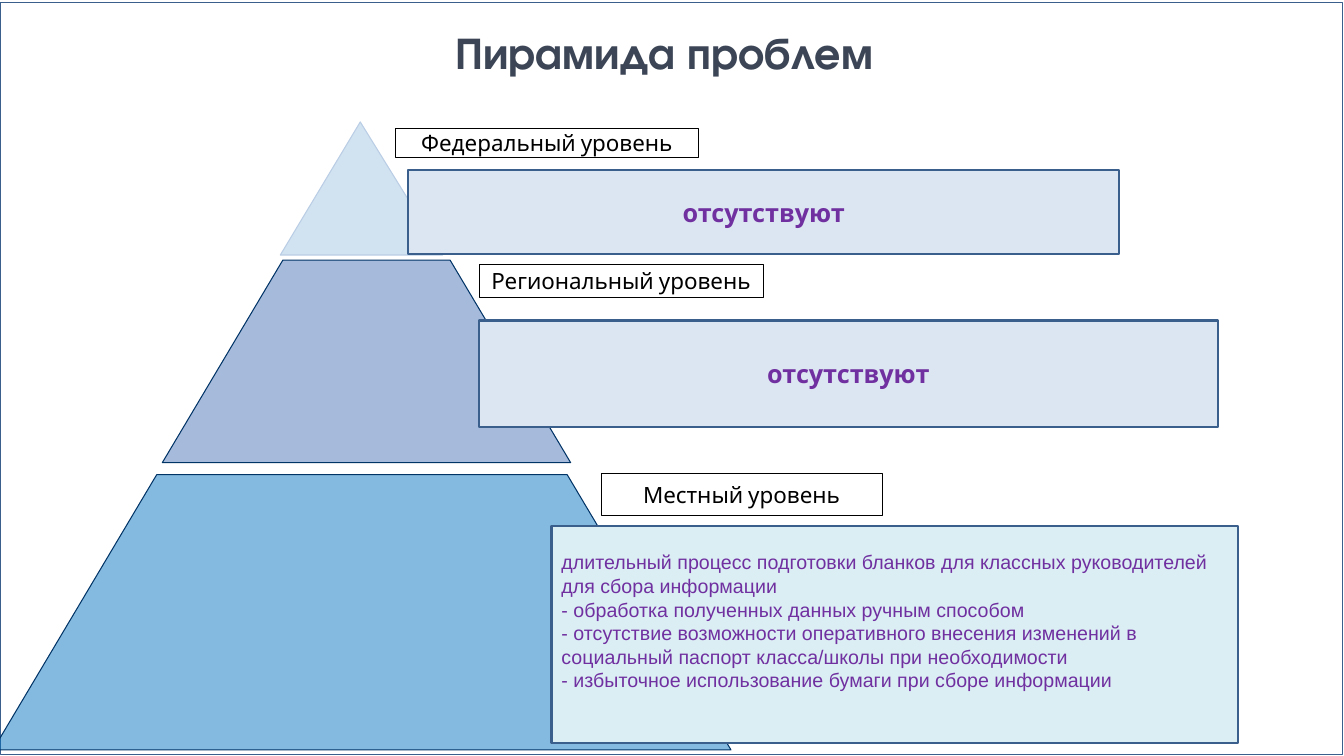
from pptx import Presentation
from pptx.dml.color import RGBColor
from pptx.enum.shapes import MSO_SHAPE
from pptx.enum.text import MSO_ANCHOR, PP_ALIGN
from pptx.oxml.ns import qn
from pptx.util import Inches, Pt
from lxml import etree

RECTANGLE = MSO_SHAPE.RECTANGLE
TRIANGLE = MSO_SHAPE.ISOSCELES_TRIANGLE
TRAPEZOID = MSO_SHAPE.TRAPEZOID
LEFT, CENTER = PP_ALIGN.LEFT, PP_ALIGN.CENTER
TOP, MIDDLE = MSO_ANCHOR.TOP, MSO_ANCHOR.MIDDLE

TITLE_FORMAT = {"name": "TeX Gyre Adventor", "size": Pt(32), "bold": True}
LABEL_FORMAT = {"name": "Cabin", "size": Pt(16), "bold": False}
ANSWER_FORMAT = {"name": "Cabin", "size": Pt(18), "bold": True}
PROBLEM_FORMAT = {"name": "Arial", "size": Pt(14), "bold": False}

FRAME_BLUE = "3A5F8C"
PURPLE = "7030A0"
MISSING = ["отсутствуют"]
LOCAL_PROBLEMS = [
    "длительный процесс подготовки бланков для классных руководителей для сбора информации",
    "- обработка полученных данных ручным способом",
    "- отсутствие возможности оперативного внесения изменений в социальный паспорт "
    "класса/школы при необходимости",
    "- избыточное использование бумаги при сборе информации",
]

# shape, box, adjustment, fill, opacity in percent, line
PYRAMID_TIERS = [
    (TRIANGLE, (2.78, 1.21, 1.61, 1.32), 0.493, "327FBE", 22, "B9CDE5"),
    (TRAPEZOID, (1.61, 2.58, 4.05, 2.01), 0.595, "4770B5", 48, "003366"),
    (TRAPEZOID, (-0.07, 4.71, 7.32, 2.73), 0.595, "0070C0", 48, "003366"),
]
# label, label box, answer box
MISSING_LEVELS = [
    ("Федеральный уровень", (3.92, 1.27, 3.01, 0.29), (4.05, 1.69, 7.05, 0.83)),
    ("Региональный уровень", (4.75, 2.62, 2.82, 0.33), (4.75, 3.18, 7.33, 1.06)),
]


def color(hex_string):
    return RGBColor.from_string(hex_string)


def add_outlined_shape(slide, kind, box, fill, line, line_width):
    shape = slide.shapes.add_shape(kind, *(Inches(length) for length in box))
    shape.shadow.inherit = False
    if fill is None:
        shape.fill.background()
    else:
        shape.fill.solid()
        shape.fill.fore_color.rgb = color(fill)
    shape.line.color.rgb = color(line)
    shape.line.width = Pt(line_width)
    return shape


def write_text(shape, lines, font_format, font_color, alignment=CENTER,
               anchor=MIDDLE, side_margin=0.1, top_margin=0.05):
    frame = shape.text_frame
    frame.word_wrap = True
    frame.vertical_anchor = anchor
    frame.margin_left = frame.margin_right = Inches(side_margin)
    frame.margin_top = Inches(top_margin)
    frame.text = "\n".join(lines)
    for paragraph in frame.paragraphs:
        paragraph.alignment = alignment
        for run in paragraph.runs:
            for attribute, value in font_format.items():
                setattr(run.font, attribute, value)
            run.font.color.rgb = color(font_color)


def add_title(slide, box):
    title = slide.shapes.add_textbox(*(Inches(length) for length in box))
    write_text(title, ["Пирамида проблем"], TITLE_FORMAT, "3B4555")


def add_pyramid(slide):
    for kind, box, adjustment, fill, opacity, line in PYRAMID_TIERS:
        tier = add_outlined_shape(slide, kind, box, fill, line, 0.75)
        tier.adjustments[0] = adjustment
        fill_color = tier.fill._xPr.find(qn("a:solidFill"))[0]
        etree.SubElement(fill_color, qn("a:alpha"), val=str(opacity * 1000))


def add_label(slide, text, box):
    label = add_outlined_shape(slide, RECTANGLE, box, "FFFFFF", "000000", 0.5)
    write_text(label, [text], LABEL_FORMAT, "000000", side_margin=0.05)


def add_missing_level(slide, text, label_box, answer_box):
    add_label(slide, text, label_box)
    answer = add_outlined_shape(slide, RECTANGLE, answer_box, "DCE6F2", FRAME_BLUE, 1.5)
    write_text(answer, MISSING, ANSWER_FORMAT, PURPLE)


def add_local_level(slide, label_box, problems_box):
    add_label(slide, "Местный уровень", label_box)
    problems = add_outlined_shape(slide, RECTANGLE, problems_box, "DBEEF4", FRAME_BLUE, 1.5)
    write_text(problems, LOCAL_PROBLEMS, PROBLEM_FORMAT, PURPLE,
               alignment=LEFT, anchor=TOP, top_margin=0.24)


def main():
    presentation = Presentation()
    presentation.slide_width = Inches(13.33)
    presentation.slide_height = Inches(7.5)
    slide = presentation.slides.add_slide(presentation.slide_layouts[6])
    add_outlined_shape(slide, RECTANGLE, (0, 0.02, 13.31, 7.46), None, FRAME_BLUE, 0.25)
    add_title(slide, (0.71, 0.06, 11.76, 0.91))
    add_pyramid(slide)
    for text, label_box, answer_box in MISSING_LEVELS:
        add_missing_level(slide, text, label_box, answer_box)
    add_local_level(slide, (5.96, 4.7, 2.79, 0.41), (5.47, 5.22, 6.81, 2.15))
    presentation.save("out.pptx")


if __name__ == "__main__":
    main()
